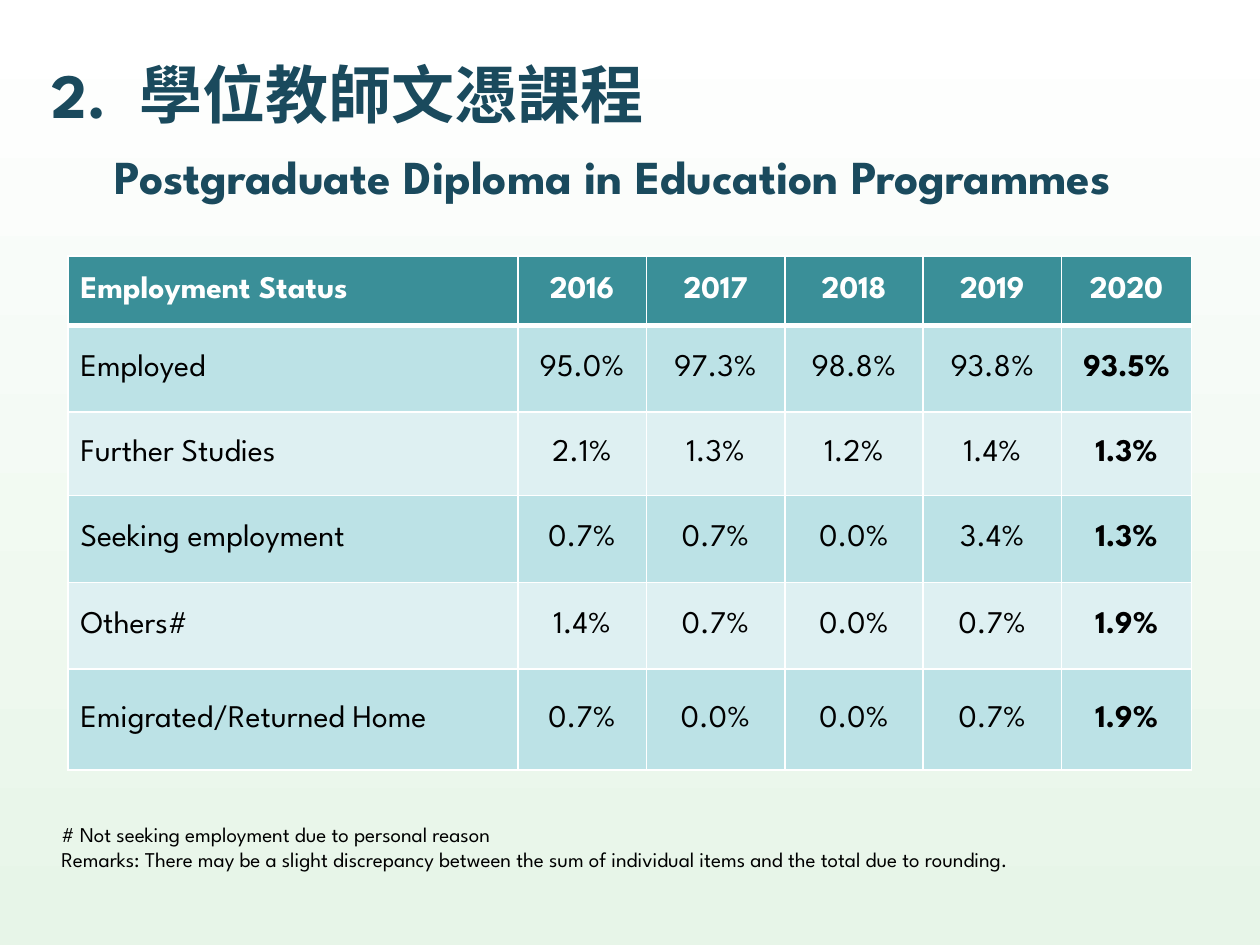
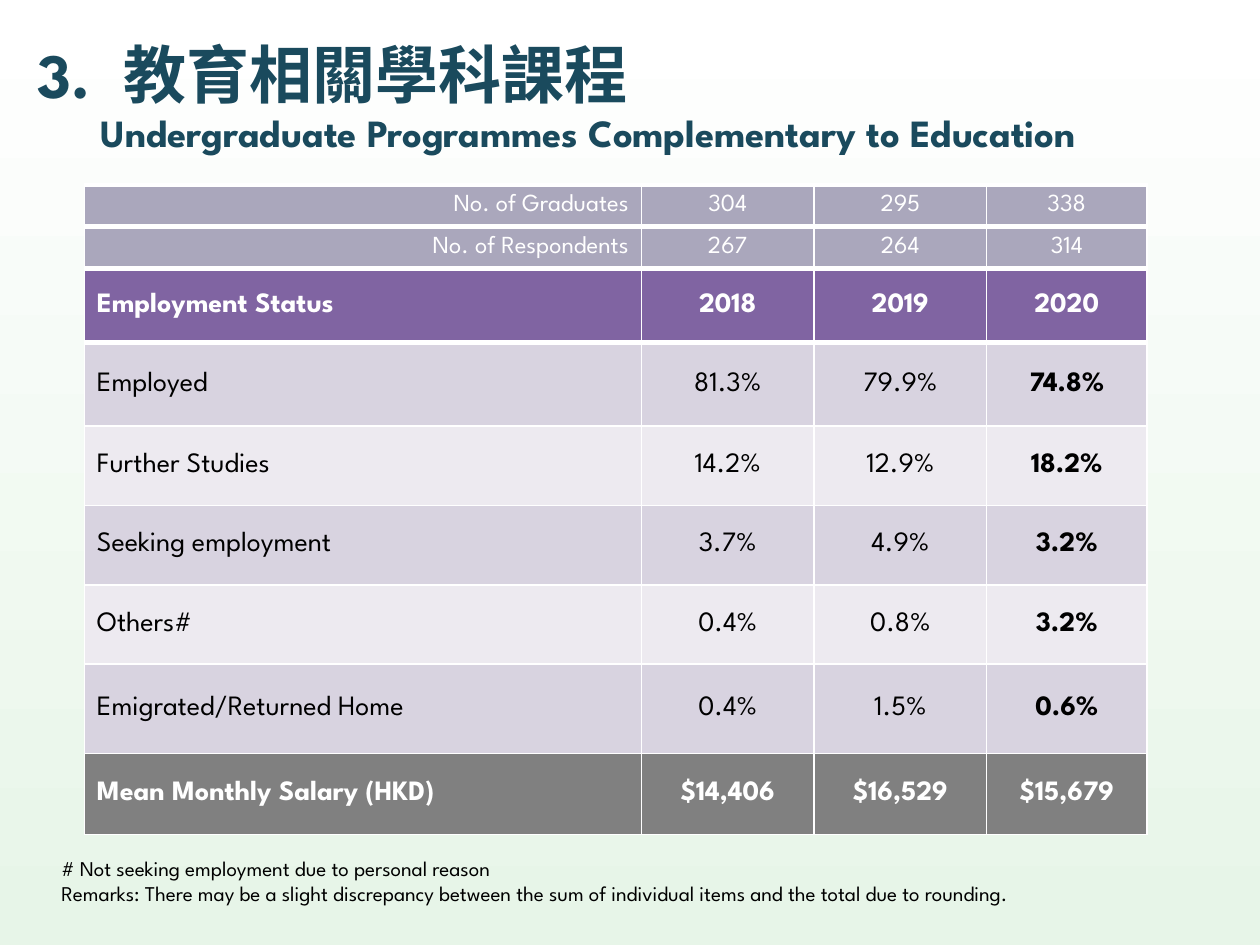
from copy import deepcopy

from lxml.etree import SubElement
from pptx import Presentation
from pptx.dml.color import RGBColor
from pptx.enum.text import MSO_ANCHOR, MSO_AUTO_SIZE, PP_ALIGN
from pptx.oxml.ns import qn
from pptx.util import Cm, Pt

FONT = "League Spartan"
WHITE = RGBColor(0xFF, 0xFF, 0xFF)
BLACK = RGBColor(0x00, 0x00, 0x00)
MINT = RGBColor(0xE7, 0xF5, 0xE8)
NAVY = RGBColor(0x1A, 0x4A, 0x5D)
TEAL = RGBColor(0x3A, 0x8F, 0x98)
TEAL_MID = RGBColor(0xBC, 0xE2, 0xE6)
TEAL_PALE = RGBColor(0xDE, 0xF0, 0xF2)
PURPLE = RGBColor(0x80, 0x64, 0xA2)
PURPLE_MID = RGBColor(0xD8, 0xD3, 0xE0)
PURPLE_PALE = RGBColor(0xED, 0xEA, 0xF0)
LAVENDER = RGBColor(0xAA, 0xA7, 0xBC)
GREY = RGBColor(0x80, 0x80, 0x80)

REMARKS = [
    "# Not seeking employment due to personal reason",
    "Remarks: There may be a slight discrepancy between the sum of individual items "
    "and the total due to rounding.",
]

PROGRAMMES = [
    {
        "number": "2.",
        "chinese": "學位教師文憑課程",
        "english": "Postgraduate Diploma in Education Programmes",
        "english_size": 27,
        "line_spacing": None,
        "title_box": (0.79, 0.99, 24.31, 3.81),
        "table_corner": (1.37, 5.16),
        "column_widths": [9.07, 2.59, 2.79, 2.79, 2.79, 2.62],
        "row_heights": [1.4, 1.75, 1.68, 1.75, 1.75, 2.03],
        "remarks_top": 16.43,
        "size": 18,
        "head_fill": TEAL,
        "bands": (TEAL_MID, TEAL_PALE),
        "rows": [
            ("head", "Employment Status", "2016", "2017", "2018", "2019", "2020"),
            ("status", "Employed", "95.0%", "97.3%", "98.8%", "93.8%", "93.5%"),
            ("status", "Further Studies", "2.1%", "1.3%", "1.2%", "1.4%", "1.3%"),
            ("status", "Seeking employment", "0.7%", "0.7%", "0.0%", "3.4%", "1.3%"),
            ("status", "Others#", "1.4%", "0.7%", "0.0%", "0.7%", "1.9%"),
            ("status", "Emigrated/Returned Home", "0.7%", "0.0%", "0.0%", "0.7%", "1.9%"),
        ],
    },
    {
        "number": "3.",
        "chinese": "教育相關學科課程",
        "english": "Undergraduate Programmes Complementary to Education",
        "english_size": 22,
        "line_spacing": Pt(28),
        "title_box": (0.51, 1.12, 25.53, 3.15),
        "table_corner": (1.7, 3.73),
        "column_widths": [11.23, 3.48, 3.48, 3.23],
        "row_heights": [0.84, 0.84, 1.5, 1.68, 1.6, 1.6, 1.6, 1.8, 1.63],
        "remarks_top": 17.12,
        "size": 16,
        "head_fill": PURPLE,
        "bands": (PURPLE_MID, PURPLE_PALE),
        "rows": [
            ("count", "No. of Graduates", "304", "295", "338"),
            ("count", "No. of Respondents", "267", "264", "314"),
            ("head", "Employment Status", "2018", "2019", "2020"),
            ("status", "Employed", "81.3%", "79.9%", "74.8%"),
            ("status", "Further Studies", "14.2%", "12.9%", "18.2%"),
            ("status", "Seeking employment", "3.7%", "4.9%", "3.2%"),
            ("status", "Others#", "0.4%", "0.8%", "3.2%"),
            ("status", "Emigrated/Returned Home", "0.4%", "1.5%", "0.6%"),
            ("salary", "Mean Monthly Salary (HKD)", "$14,406", "$16,529", "$15,679"),
        ],
    },
]


def add_run(paragraph, text, size, colour, bold=False):
    run = paragraph.add_run()
    run.text = text
    run.font.name = FONT
    run.font.size = Pt(size)
    run.font.bold = bold
    run.font.color.rgb = colour
    return run


def paint_background(master):
    fill = master.background.fill
    fill.gradient()
    fill.gradient_angle = 270
    for stop, position, colour in zip(fill.gradient_stops, (0, 1), (WHITE, MINT)):
        stop.position = position
        stop.color.rgb = colour


def write_title(slide, programme):
    title = slide.shapes.title
    title.left, title.top, title.width, title.height = map(Cm, programme["title_box"])
    frame = title.text_frame
    frame.auto_size = MSO_AUTO_SIZE.NONE
    frame.word_wrap = True
    frame.vertical_anchor = MSO_ANCHOR.TOP
    heading = frame.paragraphs[0]
    heading.alignment = PP_ALIGN.LEFT
    if programme["line_spacing"]:
        heading.line_spacing = programme["line_spacing"]
    tabs = SubElement(heading._p.get_or_add_pPr(), qn("a:tabLst"))
    SubElement(tabs, qn("a:tab"), pos=str(Cm(1.27)), algn="l")

    add_run(heading, programme["number"], 36, NAVY, True)
    gap = add_run(heading, " ", 36, NAVY, True)
    gap._r.get_or_add_rPr().set("spc", "900")
    chinese = add_run(heading, programme["chinese"], 36, NAVY, True)
    heading.add_line_break()
    line_break = heading._p.find(qn("a:br"))
    line_break.insert(0, deepcopy(chinese._r.get_or_add_rPr()))
    add_run(heading, "\t", 36, NAVY, True)
    add_run(heading, programme["english"], programme["english_size"], NAVY, True)


def set_borders(cell, top, bottom):
    properties = cell._tc.get_or_add_tcPr()
    widths = (("lnL", 1), ("lnR", 1), ("lnT", top), ("lnB", bottom))
    for index, (side, width) in enumerate(widths):
        line = SubElement(properties, qn("a:" + side), w=str(Pt(width)))
        fill = SubElement(line, qn("a:solidFill"))
        SubElement(fill, qn("a:srgbClr"), val=str(WHITE))
        properties.insert(index, line)


def write_table(slide, programme):
    rows = programme["rows"]
    widths, heights = programme["column_widths"], programme["row_heights"]
    left, top = programme["table_corner"]
    table = slide.shapes.add_table(
        len(rows), len(widths), Cm(left), Cm(top), Cm(sum(widths)), Cm(sum(heights))
    ).table
    for column, width in zip(table.columns, widths):
        column.width = Cm(width)
    for row, height in zip(table.rows, heights):
        row.height = Cm(height)

    kinds = [row[0] for row in rows]
    first_status = kinds.index("status")
    fills = {"head": programme["head_fill"], "count": LAVENDER, "salary": GREY}
    for r, (kind, *entries) in enumerate(rows):
        fill = fills.get(kind) or programme["bands"][(r - first_status) % 2]
        heavy_top = kind == "count" or (r > 0 and r <= first_status)
        heavy_bottom = r < first_status
        for c, entry in enumerate(entries):
            cell = table.cell(r, c)
            cell.vertical_anchor = MSO_ANCHOR.MIDDLE
            cell.fill.solid()
            cell.fill.fore_color.rgb = fill
            set_borders(cell, 3 if heavy_top else 1, 3 if heavy_bottom else 1)
            paragraph = cell.text_frame.paragraphs[0]
            if c > 0:
                paragraph.alignment = PP_ALIGN.CENTER
            else:
                paragraph.alignment = PP_ALIGN.RIGHT if kind == "count" else PP_ALIGN.LEFT
            latest = kind == "status" and c == len(entries) - 1
            add_run(
                paragraph,
                entry,
                14 if kind == "count" else programme["size"],
                BLACK if kind == "status" else WHITE,
                latest or kind in ("head", "salary"),
            )


def write_remarks(slide, top):
    frame = slide.shapes.add_textbox(Cm(0.99), Cm(top), Cm(23.39), Cm(1.27)).text_frame
    frame.word_wrap = True
    for index, remark in enumerate(REMARKS):
        paragraph = frame.add_paragraph() if index else frame.paragraphs[0]
        add_run(paragraph, remark, 12, BLACK)


def main():
    deck = Presentation()
    deck.slide_width, deck.slide_height = Cm(25.4), Cm(19.05)
    paint_background(deck.slide_master)
    title_only = deck.slide_layouts.get_by_name("Title Only")
    for programme in PROGRAMMES:
        slide = deck.slides.add_slide(title_only)
        write_title(slide, programme)
        write_table(slide, programme)
        write_remarks(slide, programme["remarks_top"])
    deck.save("out.pptx")


if __name__ == "__main__":
    main()
